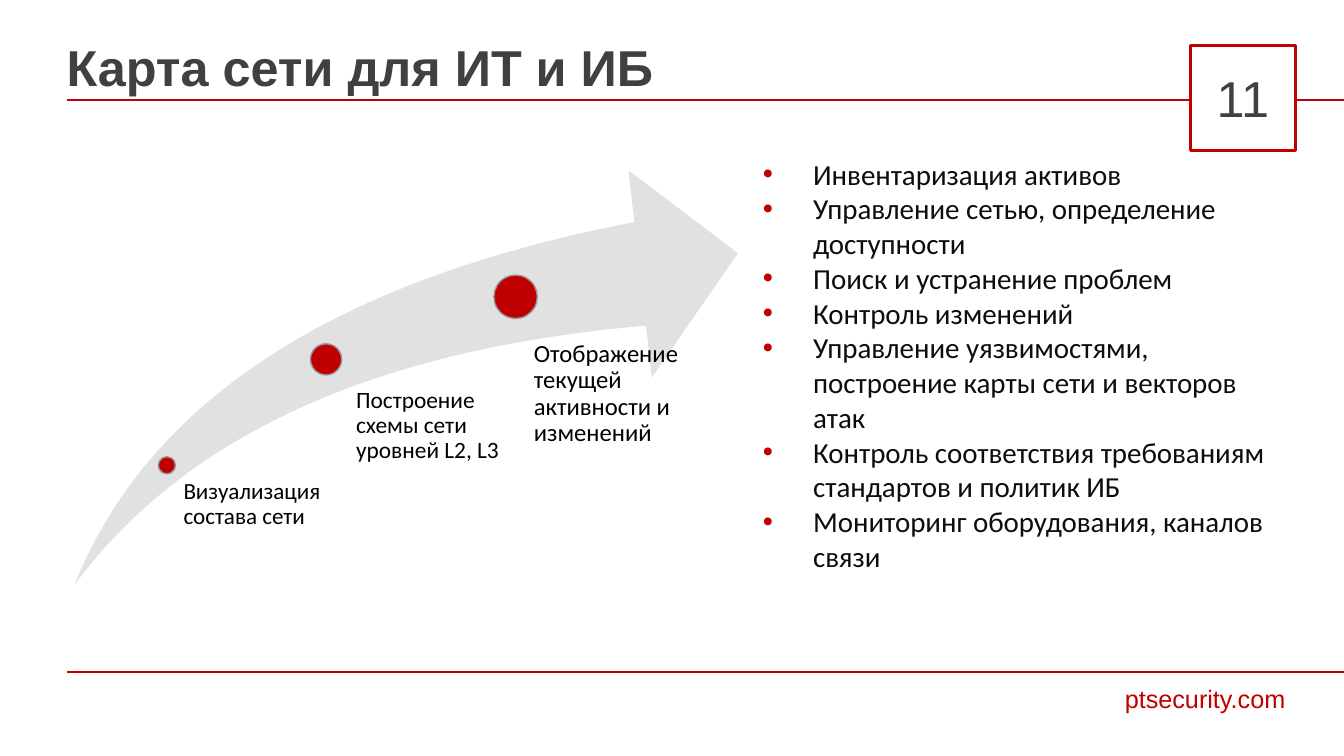
from dataclasses import dataclass

from lxml.etree import SubElement
from pptx import Presentation
from pptx.dml.color import RGBColor
from pptx.enum.shapes import MSO_CONNECTOR, MSO_SHAPE
from pptx.enum.text import MSO_ANCHOR as Anchor, PP_ALIGN as Align
from pptx.oxml.ns import qn
from pptx.util import Pt


@dataclass(frozen=True)
class Theme:
    red: str = "C00000"
    heading: str = "404040"
    body: str = "0D0D0D"
    label: str = "000000"
    arrow: str = "E1E1E1"
    dot_edge: str = "969696"
    white: str = "FFFFFF"
    head_font: str = "Arial"
    body_font: str = "Calibri"
    title_size: float = 36
    list_size: float = 20.7
    footer_size: float = 18
    rule_width: float = 1.75


THEME = Theme()
PAGE_WIDTH, PAGE_HEIGHT = 960, 540
RULE_LEFT = 48

# Dot centre x, centre y, diameter; label left, top, width, inset, size; text
MILESTONES = [
    ((119.2, 332.4, 12.3), (124.6, 342.7, 110.2, 6.5, 16.5),
     "Визуализация состава сети"),
    ((232.9, 256.7, 22.3), (242.6, 277.2, 113.8, 11.8, 16.7),
     "Построение схемы сети уровней L2, L3"),
    ((368.3, 212, 31), (365, 243.4, 137.5, 16.3, 17.6),
     "Отображение текущей активности и изменений"),
]

BENEFITS = [
    "Инвентаризация активов",
    "Управление сетью, определение доступности",
    "Поиск и устранение проблем",
    "Контроль изменений",
    "Управление уязвимостями, построение карты сети и векторов атак",
    "Контроль соответствия требованиям стандартов и политик ИБ",
    "Мониторинг оборудования, каналов связи",
]


def color(code):
    return RGBColor.from_string(code)


def style_para(para, font_name, size, code, bold=False, align=Align.LEFT):
    para.alignment = align
    for span in para.runs:
        font = span.font
        font.name, font.size, font.bold = font_name, Pt(size), bold
        font.color.rgb = color(code)


def add_text(page, box, text, inset=None):
    shape = page.shapes.add_textbox(*map(Pt, box))
    frame = shape.text_frame
    frame.word_wrap = True
    if inset is not None:
        frame.margin_left = Pt(inset)
        frame.margin_top = frame.margin_right = frame.margin_bottom = 0
    frame.text = text
    return frame


def add_shape(page, kind, box, fill, edge=None, edge_width=1):
    shape = page.shapes.add_shape(kind, *map(Pt, box))
    shape.shadow.inherit = False
    shape.fill.solid()
    shape.fill.fore_color.rgb = color(fill)
    if edge:
        shape.line.color.rgb = color(edge)
        shape.line.width = Pt(edge_width)
    else:
        shape.line.fill.background()
    return shape


def add_rule(page, top):
    rule = page.shapes.add_connector(
        MSO_CONNECTOR.STRAIGHT, Pt(PAGE_WIDTH), Pt(top), Pt(RULE_LEFT), Pt(top))
    rule.line.color.rgb = color(THEME.red)
    rule.line.width = Pt(THEME.rule_width)
    SubElement(rule._element.spPr, qn("a:effectLst"))


def set_title(page, text):
    title = page.shapes.title
    title.left, title.top, title.width, title.height = map(
        Pt, (40.3, 22.3, 700.6, 51))
    frame = title.text_frame
    frame.text = text
    frame.vertical_anchor = Anchor.TOP
    style_para(frame.paragraphs[0], THEME.head_font, THEME.title_size,
               THEME.heading, bold=True)


def add_page_number(page, number):
    badge = add_shape(page, MSO_SHAPE.RECTANGLE, (850.3, 32.4, 75, 75),
                      THEME.white, THEME.red, THEME.rule_width)
    frame = badge.text_frame
    frame.text = number
    frame.vertical_anchor = Anchor.MIDDLE
    style_para(frame.paragraphs[0], THEME.head_font, THEME.title_size,
               THEME.heading, align=Align.CENTER)


def add_milestone(page, dot, label, text):
    center_x, center_y, size = dot
    add_shape(page, MSO_SHAPE.OVAL,
              (center_x - size / 2, center_y - size / 2, size, size),
              THEME.red, THEME.dot_edge)
    left, top, width, inset, text_size = label
    frame = add_text(page, (left, top, width, 85), text, inset)
    para = frame.paragraphs[0]
    para.line_spacing = 0.9
    style_para(para, THEME.body_font, text_size, THEME.label)


def add_bullet(para, indent):
    props = para._p.get_or_add_pPr()
    props.set("marL", str(Pt(indent)))
    props.set("indent", str(-Pt(indent)))
    bullet_color = SubElement(props, qn("a:buClr"))
    SubElement(bullet_color, qn("a:srgbClr"), val=THEME.red)
    SubElement(props, qn("a:buFont"), typeface="Arial")
    SubElement(props, qn("a:buChar"), char="•")


def add_bullet_list(page, box, items):
    frame = add_text(page, box, "\n".join(items))
    for para in frame.paragraphs:
        add_bullet(para, 36)
        style_para(para, THEME.body_font, THEME.list_size, THEME.body)


def main():
    deck = Presentation()
    deck.slide_width, deck.slide_height = Pt(PAGE_WIDTH), Pt(PAGE_HEIGHT)
    page = deck.slides.add_slide(deck.slide_layouts[5])

    # Header and footer
    set_title(page, "Карта сети для ИТ и ИБ")
    add_rule(page, 71.3)
    add_page_number(page, "11")
    add_rule(page, 480)
    footer = add_text(page, (456.5, 484.6, 468.7, 29), "ptsecurity.com")
    style_para(footer.paragraphs[0], THEME.head_font, THEME.footer_size,
               THEME.red, align=Align.RIGHT)

    # Rising arrow with its milestones
    arrow = add_shape(page, MSO_SHAPE.SWOOSH_ARROW,
                      (53.3, 121.7, 473.8, 296), THEME.arrow)
    arrow.adjustments[0] = arrow.adjustments[1] = 0.25
    for dot, label, text in MILESTONES:
        add_milestone(page, dot, label, text)

    # Benefits
    add_bullet_list(page, (537.8, 108, 388, 312.5), BENEFITS)

    deck.save("out.pptx")


if __name__ == "__main__":
    main()
